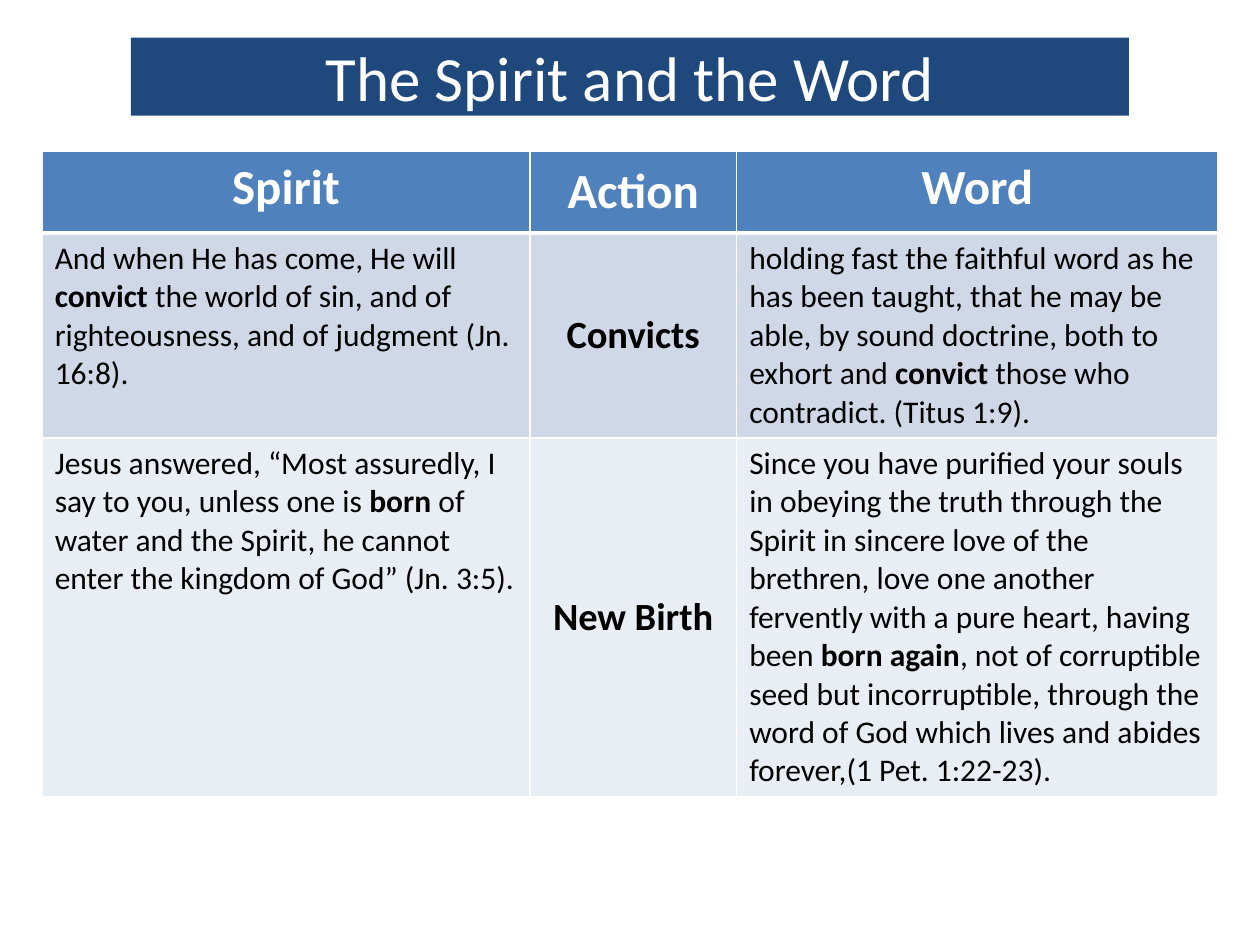
from lxml import etree
from pptx import Presentation
from pptx.dml.color import RGBColor
from pptx.enum import text
from pptx.oxml.ns import qn
from pptx.util import Cm, Pt

WHITE = RGBColor(0xFF, 0xFF, 0xFF)
BLACK = RGBColor(0, 0, 0)
NAVY = RGBColor(0x1F, 0x49, 0x7D)
HEADER_BLUE = RGBColor(0x4F, 0x81, 0xBD)
BAND_DARK = RGBColor(0xD0, 0xD8, 0xE8)
BAND_LIGHT = RGBColor(0xE9, 0xED, 0xF4)
FONT = "Calibri"

COLUMN_WIDTHS = [Cm(9.83), Cm(4.17), Cm(9.7)]
ROW_HEIGHTS = [Cm(1.65), Cm(3.43), Cm(4.22)]
ROW_FILLS = [HEADER_BLUE, BAND_DARK, BAND_LIGHT]

# Each verse is (before, bold words, after)
HEADINGS = ["Spirit", "Action", "Word"]
COMPARISONS = [
    (("And when He has come, He will ", "convict",
      " the world of sin, and of righteousness, and of judgment (Jn. 16:8)."),
     "Convicts",
     ("holding fast the faithful word as he has been taught, that he may be "
      "able, by sound doctrine, both to exhort and ", "convict",
      " those who contradict. (Titus 1:9).")),
    (("Jesus answered, “Most assuredly, I say to you, unless one is ", "born",
      " of water and the Spirit, he cannot enter the kingdom of God” (Jn. 3:5)."),
     "New Birth",
     ("Since you have purified your souls in obeying the truth through the "
      "Spirit in sincere love of the brethren, love one another fervently "
      "with a pure heart, having been ", "born again",
      ", not of corruptible seed but incorruptible, through the word of God "
      "which lives and abides forever,(1 Pet. 1:22-23).")),
]


def add_run(paragraph, words, size, color, bold=False):
    run = paragraph.add_run()
    run.text = words
    run.font.name = FONT
    run.font.size = Pt(size)
    run.font.bold = bold
    run.font.color.rgb = color


def set_borders(cell, top, bottom):
    properties = cell._tc.get_or_add_tcPr()
    sides = [("lnL", 1), ("lnR", 1), ("lnT", top), ("lnB", bottom)]
    for position, (side, width) in enumerate(sides):
        line = etree.Element(qn(f"a:{side}"), w=str(Pt(width)))
        fill = etree.SubElement(line, qn("a:solidFill"))
        etree.SubElement(fill, qn("a:srgbClr"), val=str(WHITE))
        properties.insert(position, line)


def write_label(cell, words, size, color):
    paragraph = cell.text_frame.paragraphs[0]
    paragraph.alignment = text.PP_ALIGN.CENTER
    add_run(paragraph, words, size, color, bold=True)


def write_verse(cell, verse):
    paragraph = cell.text_frame.paragraphs[0]
    for part, words in enumerate(verse):
        add_run(paragraph, words, 18, BLACK, bold=part == 1)


def add_title(slide):
    title = slide.shapes.title
    title.left, title.top = Cm(2.64), Cm(0.76)
    title.width, title.height = Cm(20.12), Cm(1.57)
    title.fill.solid()
    title.fill.fore_color.rgb = NAVY
    frame = title.text_frame
    frame.vertical_anchor = text.MSO_ANCHOR.MIDDLE
    frame.paragraphs[0].alignment = text.PP_ALIGN.CENTER
    add_run(frame.paragraphs[0], "The Spirit and the Word", 36, WHITE)


def add_comparison_table(slide):
    frame = slide.shapes.add_table(3, 3, Cm(0.85), Cm(3.05), Cm(23.7), Cm(12.83))
    table = frame.table
    for column, width in zip(table.columns, COLUMN_WIDTHS):
        column.width = width
    for row, height in zip(table.rows, ROW_HEIGHTS):
        row.height = height
    frame.height = Cm(12.83)

    # Row bands, with a thick rule under the headings
    for index, row in enumerate(table.rows):
        for cell in row.cells:
            cell.fill.solid()
            cell.fill.fore_color.rgb = ROW_FILLS[index]
            set_borders(cell, 3 if index == 1 else 1, 3 if index == 0 else 1)
        row.cells[1].vertical_anchor = text.MSO_ANCHOR.MIDDLE

    # Headings, then a verse on each side of every action
    for column, heading in enumerate(HEADINGS):
        write_label(table.cell(0, column), heading, 28, WHITE)
    for row, (spirit, action, word) in enumerate(COMPARISONS, start=1):
        write_verse(table.cell(row, 0), spirit)
        write_label(table.cell(row, 1), action, 22, BLACK)
        write_verse(table.cell(row, 2), word)


def main():
    deck = Presentation()
    deck.slide_width, deck.slide_height = Cm(25.4), Cm(19.05)
    slide = deck.slides.add_slide(deck.slide_layouts[5])
    add_title(slide)
    add_comparison_table(slide)
    deck.save("out.pptx")


if __name__ == "__main__":
    main()
